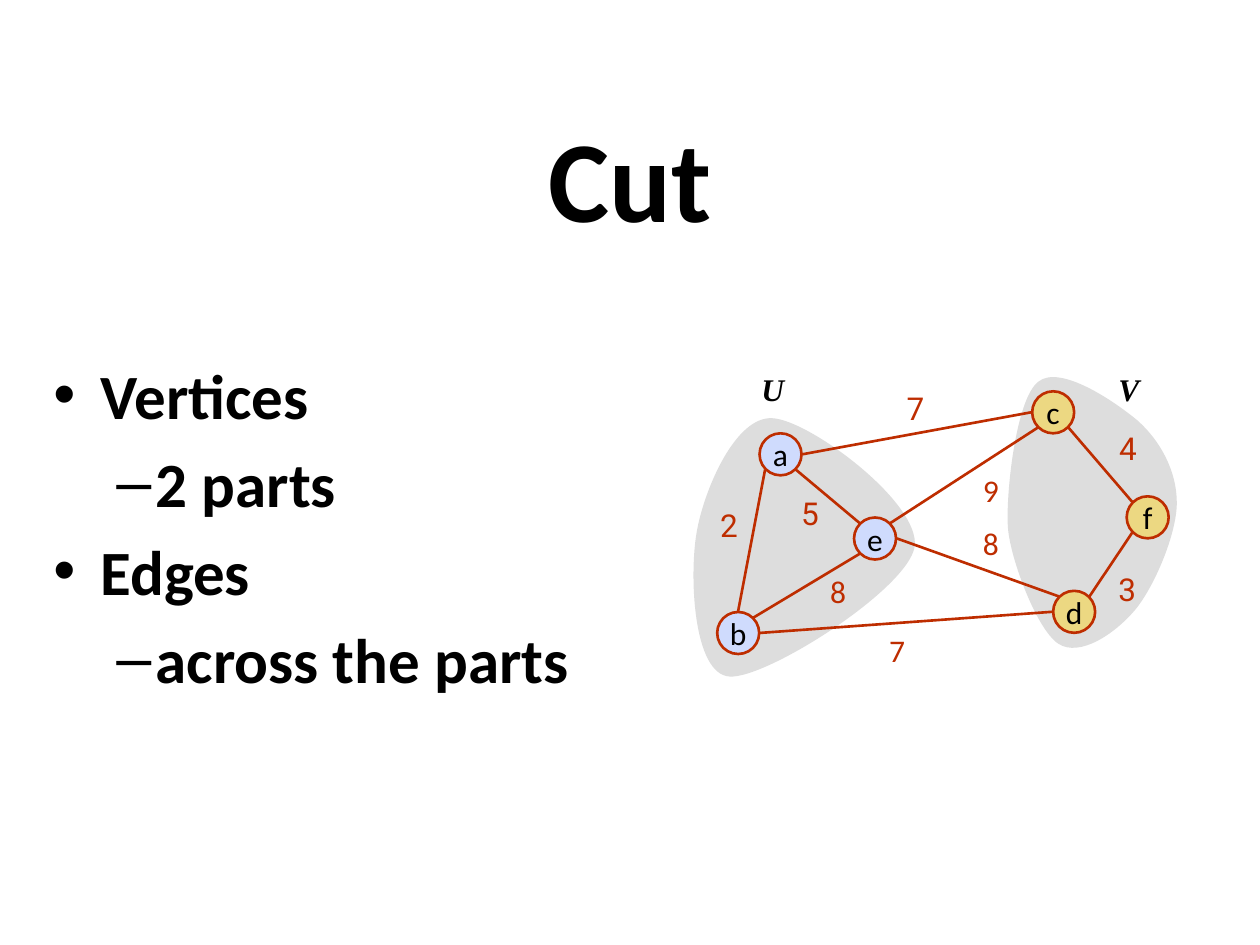
from lxml import etree
from pptx import Presentation
from pptx.dml.color import RGBColor
from pptx.enum.shapes import MSO_CONNECTOR, MSO_SHAPE
from pptx.enum.text import MSO_ANCHOR, MSO_AUTO_SIZE, PP_ALIGN
from pptx.oxml.ns import qn
from pptx.util import Pt

OVAL = MSO_SHAPE.OVAL
STRAIGHT = MSO_CONNECTOR.STRAIGHT
MIDDLE = MSO_ANCHOR.MIDDLE
CENTER = PP_ALIGN.CENTER
GROW = MSO_AUTO_SIZE.SHAPE_TO_FIT_TEXT

BLACK, RED, GRAY = "000000", "BE2D00", "DDDDDD"
BLUE, GOLD = "CFDBFD", "ECD882"
RADIUS = 12
REACH = 12.5
DIAG = 8.8

NODES = {
    "a": (446, 259.6, BLUE), "c": (601.8, 235.6, GOLD),
    "e": (500, 307.7, BLUE), "b": (421.8, 361.7, BLUE),
    "f": (655.8, 295.6, GOLD), "d": (613.8, 349.6, GOLD),
}
SIDES = {
    "N": (0, -REACH), "E": (REACH, 0), "W": (-REACH, 0),
    "NE": (DIAG, -DIAG), "SE": (DIAG, DIAG),
    "SW": (-DIAG, DIAG), "NW": (-DIAG, -DIAG),
}
EDGES = [
    ("a", "SE", "e", "NW"), ("e", "SW", "b", "NE"), ("a", "SW", "b", "N"),
    ("e", "E", "d", "NW"), ("b", "E", "d", "W"), ("a", "E", "c", "W"),
    ("e", "NE", "c", "SW"), ("f", "NW", "c", "SE"), ("d", "NE", "f", "SW"),
]
WEIGHTS = [
    ("7", 511, 219, "Roboto"), ("4", 632.5, 241.8, "Roboto"),
    ("2", 404.5, 285.7, "Roboto"), ("8", 554.5, 296, "Calibri"),
    ("5", 450.7, 278.5, "Roboto"), ("7", 501, 357, "Calibri"),
    ("3", 632, 322, "Roboto"), ("9", 554.5, 265.5, "Calibri"),
    ("8", 467.3, 323.3, "Calibri"),
]
V_START = (576, 301.7)
V_CURVES = [
    ((577.4, 319.7), (592.6, 360), (604.8, 367.9)),
    ((617, 375.8), (637.2, 362.2), (648.7, 348.5)),
    ((659.5, 335.5), (672.5, 305.3), (672.5, 287.3)),
    ((672.5, 269.3), (663.1, 252), (650.2, 240.5)),
    ((636.5, 229), (605.5, 208.1), (593.3, 218.2)),
    ((580.3, 228.2), (574.6, 283.7), V_START),
]
U_START = (398.2, 303.8)
U_CURVES = [
    ((393.8, 328.3), (396, 385.2), (416.9, 386.6)),
    ((437.8, 388.1), (518.4, 337), (522.7, 312.5)),
    ((526.3, 287.3), (462.2, 239.8), (441.4, 239)),
    ((420.5, 237.6), (402.5, 279.4), U_START),
]
POINTS = [("Vertices", 0), ("2 parts", 1), ("Edges", 0), ("across the parts", 1)]
LEVELS = [("•", 27, -27), ("–", 58.5, -22.5)]


def color(code):
    """Turn a hex string into a colour."""
    return RGBColor.from_string(code)


def style(para, size, font="Calibri", code=BLACK, bold=False, italic=False):
    """Format every run of a paragraph."""
    for run in para.runs:
        face = run.font
        face.size, face.name = Pt(size), font
        face.bold, face.italic = bold, italic
        face.color.rgb = color(code)


def add_box(slide, left, top, width, height, wrap=True):
    """Add a text box and return its frame."""
    box = slide.shapes.add_textbox(Pt(left), Pt(top), Pt(width), Pt(height))
    box.text_frame.word_wrap = wrap
    return box.text_frame


def add_title(slide, text):
    """Add the centred heading."""
    frame = add_box(slide, 36, 55.5, 648, 90)
    frame.vertical_anchor = MIDDLE
    frame.text = text
    para = frame.paragraphs[0]
    para.alignment = CENTER
    style(para, 66, bold=True)


def add_list(slide):
    """Add the bulleted points on two levels."""
    frame = add_box(slide, 23.4, 200, 340, 183.5)
    frame.text = "\n".join(text for text, _ in POINTS)
    for para, (_, level) in zip(frame.paragraphs, POINTS):
        mark, margin, indent = LEVELS[level]
        para.level = level
        para.space_before = Pt(7.1)
        style(para, 36, bold=True)
        props = para._p.get_or_add_pPr()
        props.set("marL", str(Pt(margin)))
        props.set("indent", str(Pt(indent)))
        etree.SubElement(props, qn("a:buFont"), typeface="Arial")
        etree.SubElement(props, qn("a:buChar"), char=mark)


def bend(shape):
    """Join each three line segments of an outline into one cubic curve."""
    lines = list(shape._element.iter(qn("a:lnTo")))
    for first in range(0, len(lines), 3):
        curve = etree.Element(qn("a:cubicBezTo"))
        lines[first].addprevious(curve)
        for line in lines[first:first + 3]:
            curve.append(line[0])
            line.getparent().remove(line)


def add_region(slide, start, curves):
    """Add one gray part of the cut."""
    x, y = start
    form = slide.shapes.build_freeform(Pt(x), Pt(y))
    dots = [(Pt(p), Pt(q)) for curve in curves for p, q in curve]
    form.add_line_segments(dots, close=True)
    shape = form.convert_to_shape()
    bend(shape)
    shape.shadow.inherit = False
    shape.fill.solid()
    shape.fill.fore_color.rgb = color(GRAY)
    shape.line.fill.background()


def add_node(slide, name, x, y, fill):
    """Add a vertex centred at x, y."""
    size = Pt(2 * RADIUS)
    node = slide.shapes.add_shape(OVAL, Pt(x - RADIUS), Pt(y - RADIUS), size, size)
    node.shadow.inherit = False
    node.fill.solid()
    node.fill.fore_color.rgb = color(fill)
    node.line.color.rgb = color(RED)
    node.line.width = Pt(1.5)
    frame = node.text_frame
    frame.word_wrap = False
    frame.vertical_anchor = MIDDLE
    frame.text = name
    frame.paragraphs[0].alignment = CENTER
    style(frame.paragraphs[0], 18)


def rim(name, side):
    """Return the place on a vertex where an edge meets it."""
    x, y, _ = NODES[name]
    dx, dy = SIDES[side]
    return Pt(x + dx), Pt(y + dy)


def add_edge(slide, head, out, tail, into):
    """Add an edge between two vertices."""
    edge = slide.shapes.add_connector(STRAIGHT, *rim(head, out), *rim(tail, into))
    edge.line.color.rgb = color(RED)
    edge.line.width = Pt(1.5)
    etree.SubElement(edge._element.spPr, qn("a:effectLst"))


def add_label(slide, text, x, y, wrap=False, **look):
    """Add a small label."""
    frame = add_box(slide, x, y, 25, 29, wrap)
    frame.auto_size = GROW
    frame.text = text
    style(frame.paragraphs[0], 18, **look)


def main():
    """Build and save the slide."""
    deck = Presentation()
    deck.slide_width, deck.slide_height = Pt(720), Pt(540)
    slide = deck.slides.add_slide(deck.slide_layouts[6])
    add_title(slide, "Cut")
    add_list(slide)
    add_region(slide, V_START, V_CURVES)
    add_region(slide, U_START, U_CURVES)
    for name, (x, y, fill) in NODES.items():
        add_node(slide, name, x, y, fill)
    for edge in EDGES:
        add_edge(slide, *edge)
    for text, x, y, font in WEIGHTS:
        add_label(slide, text, x, y, font=font, code=RED)
    for text, x in (("U", 428), ("V", 632)):
        add_label(slide, text, x, 208, wrap=True,
                  font="Times New Roman", bold=True, italic=True)
    deck.save("out.pptx")


if __name__ == "__main__":
    main()
